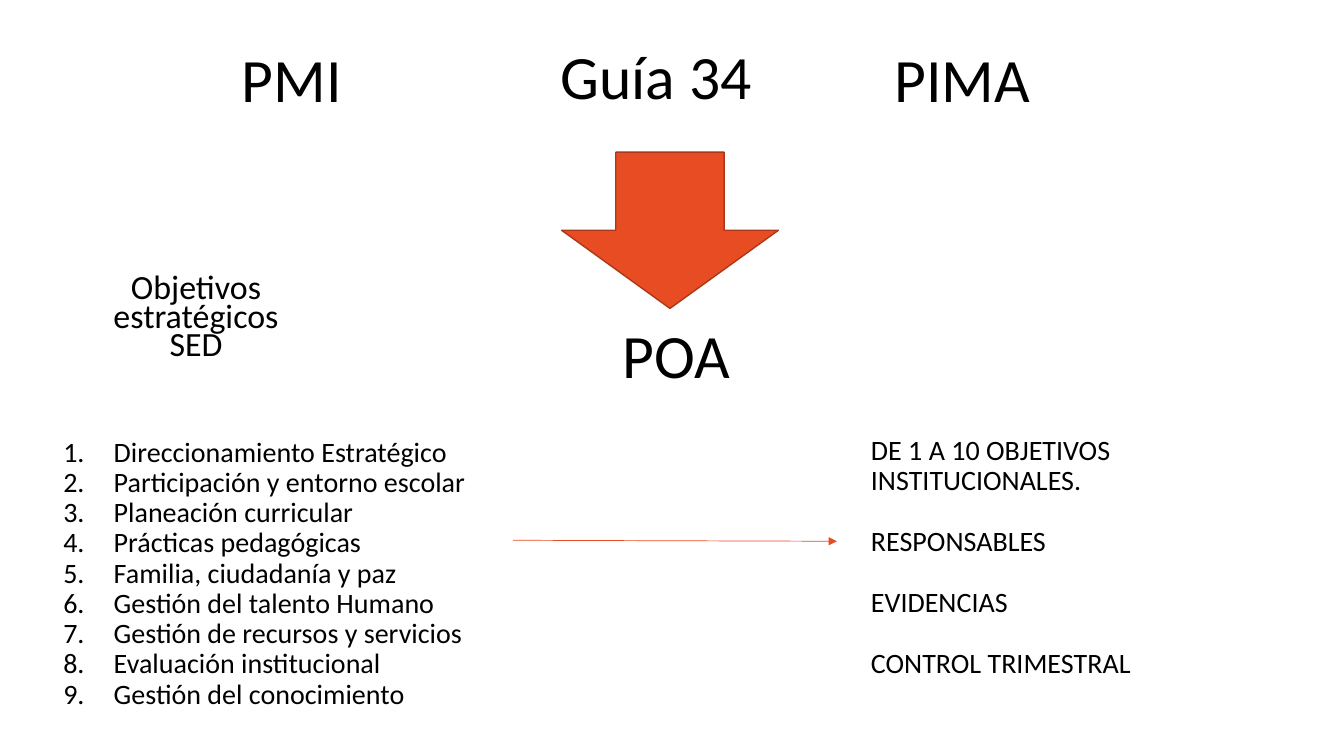
import pptx
import pptx.dml.color
import pptx.enum.dml
import pptx.enum.shapes
import pptx.enum.text
import pptx.oxml
import pptx.oxml.ns
import pptx.util

PX = 9144  # EMU per px, 100 px to the inch
FONT = "Calibri"
BLACK, ORANGE, RUST = "000000", "E84C22", "AC3819"
LEFT = pptx.enum.text.PP_ALIGN.LEFT
CENTER = pptx.enum.text.PP_ALIGN.CENTER

HEADINGS = [
    ("PMI", (230, 9, 199, 145)),
    ("Guía 34", (546, 6, 246, 145)),
    ("POA", (608, 306, 164, 100)),
]
OBJECTIVES = [
    "Direccionamiento Estratégico",
    "Participación y entorno escolar",
    "Planeación curricular",
    "Prácticas pedagógicas",
    "Familia, ciudadanía y paz",
    "Gestión del talento Humano",
    "Gestión de recursos y servicios",
    "Evaluación institucional",
    "Gestión del conocimiento",
]
PLAN_PARTS = [
    "DE 1 A 10 OBJETIVOS INSTITUCIONALES.",
    "RESPONSABLES",
    "EVIDENCIAS",
    "CONTROL TRIMESTRAL",
]


def px(*lengths):
    return [pptx.util.Emu(length * PX) for length in lengths]


def color(value):
    return pptx.dml.color.RGBColor.from_string(value)


def write(shape, lines, size, align=LEFT, spacing=0.9, gap=0):
    """Fill a text shape with vertically centred paragraphs."""
    frame = shape.text_frame
    frame.text = "\n".join(lines)
    frame.word_wrap = True
    frame.auto_size = pptx.enum.text.MSO_AUTO_SIZE.NONE
    frame.vertical_anchor = pptx.enum.text.MSO_ANCHOR.MIDDLE
    for index, para in enumerate(frame.paragraphs):
        para.alignment = align
        para.line_spacing = spacing
        para.space_before = pptx.util.Pt(gap if index else 0)
        for span in para.runs:
            span.font.name = FONT
            span.font.size = pptx.util.Pt(size)
            span.font.color.rgb = color(BLACK)
    return frame


def add_text(page, box, lines, size, **style):
    return write(page.shapes.add_textbox(*px(*box)), lines, size, **style)


def add_title(page, box, text):
    title = page.shapes.title
    title.left, title.top, title.width, title.height = px(*box)
    write(title, [text], 44)


def add_numbered_list(page, box, lines):
    frame = add_text(page, box, lines, 20)
    indent = px(50)[0]
    for para in frame.paragraphs:
        properties = para._p.get_or_add_pPr()
        properties.set("marL", str(indent))
        properties.set("indent", str(-indent))
        number = pptx.oxml.parse_xml(
            f'<a:buAutoNum {pptx.oxml.ns.nsdecls("a")} type="arabicPeriod"/>')
        properties.append(number)


def add_down_arrow(page, box):
    arrow = page.shapes.add_shape(
        pptx.enum.shapes.MSO_SHAPE.DOWN_ARROW, *px(*box))
    arrow.shadow.inherit = False
    arrow.fill.solid()
    arrow.fill.fore_color.rgb = color(ORANGE)
    arrow.line.color.rgb = color(RUST)
    arrow.line.width = pptx.util.Pt(1)


def add_thin_arrow(page, start, end):
    line = page.shapes.add_connector(
        pptx.enum.shapes.MSO_CONNECTOR.STRAIGHT, *px(*start, *end))
    line.line.color.rgb = color(ORANGE)
    line.line.width = pptx.util.Pt(0.5)
    namespace = pptx.oxml.ns.nsdecls("a")
    line.line._get_or_add_ln().append(
        pptx.oxml.parse_xml(f'<a:tailEnd {namespace} type="triangle"/>'))
    line._element.spPr.append(
        pptx.oxml.parse_xml(f"<a:effectLst {namespace}/>"))


def main():
    deck = pptx.Presentation()
    deck.slide_width, deck.slide_height = px(1333, 750)
    page = deck.slides.add_slide(deck.slide_layouts.get_by_name("Title Only"))

    # Headings around the large arrow
    add_title(page, (877, 9, 199, 145), "PIMA")
    for text, box in HEADINGS:
        add_text(page, box, [text], 44)
    add_down_arrow(page, (557, 151, 215, 155))

    # Strategic objectives leading to the plan
    add_text(page, (86, 267, 217, 100), ["Objetivos estratégicos SED"], 24.2,
             align=CENTER, spacing=0.7)
    add_numbered_list(page, (53, 403, 446, 333), OBJECTIVES)
    add_thin_arrow(page, (509, 536), (830, 537))
    add_text(page, (854, 387, 446, 333), PLAN_PARTS, 20, gap=22)

    deck.save("out.pptx")


if __name__ == "__main__":
    main()
